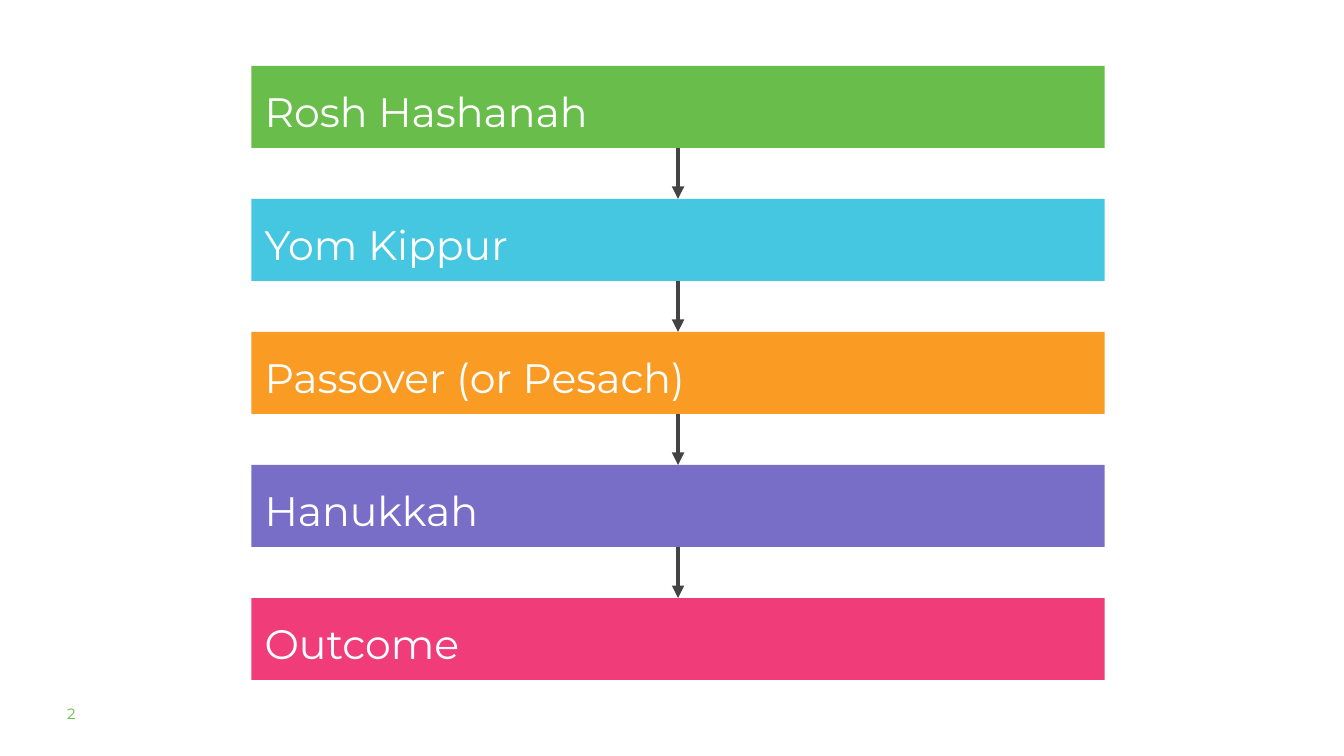
from dataclasses import dataclass

from lxml import etree
from pptx import Presentation
from pptx.dml.color import RGBColor
from pptx.enum import shapes, text
from pptx.oxml import ns
from pptx.util import Inches, Pt


@dataclass(frozen=True)
class Theme:
    font: str = "Montserrat"
    label_size: float = 22
    number_size: float = 8
    arrow_width: float = 2.25
    label: str = "FFFFFF"
    number: str = "65BE4B"
    arrow: str = "434343"
    steps: tuple = ("69BE4B", "46C7E1", "FA9B23", "786EC8", "F03C78")


@dataclass(frozen=True)
class Box:
    left: float
    top: float
    width: float
    height: float

    def lengths(self):
        return [Inches(n) for n in (self.left, self.top, self.width, self.height)]


THEME = Theme()
STEPS = ("Rosh Hashanah", "Yom Kippur", "Passover (or Pesach)", "Hanukkah", "Outcome")
BAR_HEIGHT = 0.61


def write(frame, words, size, color, inset, line_spacing=None):
    frame.word_wrap = True
    frame.vertical_anchor = text.MSO_ANCHOR.TOP
    frame.margin_left = frame.margin_right = Inches(inset)
    frame.margin_top = frame.margin_bottom = Inches(inset)
    para = frame.paragraphs[0]
    para.alignment = text.PP_ALIGN.LEFT
    para.line_spacing = line_spacing
    span = para.add_run()
    span.text = words
    span.font.name = THEME.font
    span.font.size = Pt(size)
    span.font.color.rgb = RGBColor.from_string(color)


def add_step(page, box, words, color):
    bar = page.shapes.add_shape(shapes.MSO_SHAPE.RECTANGLE, *box.lengths())
    bar.shadow.inherit = False
    bar.fill.solid()
    bar.fill.fore_color.rgb = RGBColor.from_string(color)
    bar.line.fill.background()
    write(bar.text_frame, words, THEME.label_size, THEME.label, 0.1, 1.15)
    return bar


def join_steps(page, upper, lower):
    arrow = page.shapes.add_connector(shapes.MSO_CONNECTOR.STRAIGHT, 0, 0, 0, 0)
    arrow.begin_connect(upper, 2)
    arrow.end_connect(lower, 0)
    arrow.line.width = Pt(THEME.arrow_width)
    arrow.line.color.rgb = RGBColor.from_string(THEME.arrow)
    head = etree.SubElement(arrow.line._get_or_add_ln(), ns.qn("a:tailEnd"))
    head.set("type", "triangle")
    etree.SubElement(arrow._element.spPr, ns.qn("a:effectLst"))


def add_flow(page, box):
    pitch = (box.height - BAR_HEIGHT) / (len(STEPS) - 1)
    bars = [
        add_step(page, Box(box.left, box.top + row * pitch, box.width, BAR_HEIGHT), words, color)
        for row, (words, color) in enumerate(zip(STEPS, THEME.steps))
    ]
    for upper, lower in zip(bars, bars[1:]):
        join_steps(page, upper, lower)


def add_page_number(page, box, number):
    label = page.shapes.add_textbox(*box.lengths())
    write(label.text_frame, number, THEME.number_size, THEME.number, 0)


def main():
    deck = Presentation()
    deck.slide_width = Inches(10)
    deck.slide_height = deck.slide_width * 9 // 16
    page = deck.slides.add_slide(deck.slide_layouts[6])
    add_flow(page, Box(1.87, 0.49, 6.35, 4.57))
    add_page_number(page, Box(0.5, 5.24, 0.79, 0.2), "2")
    deck.save("out.pptx")


if __name__ == "__main__":
    main()
